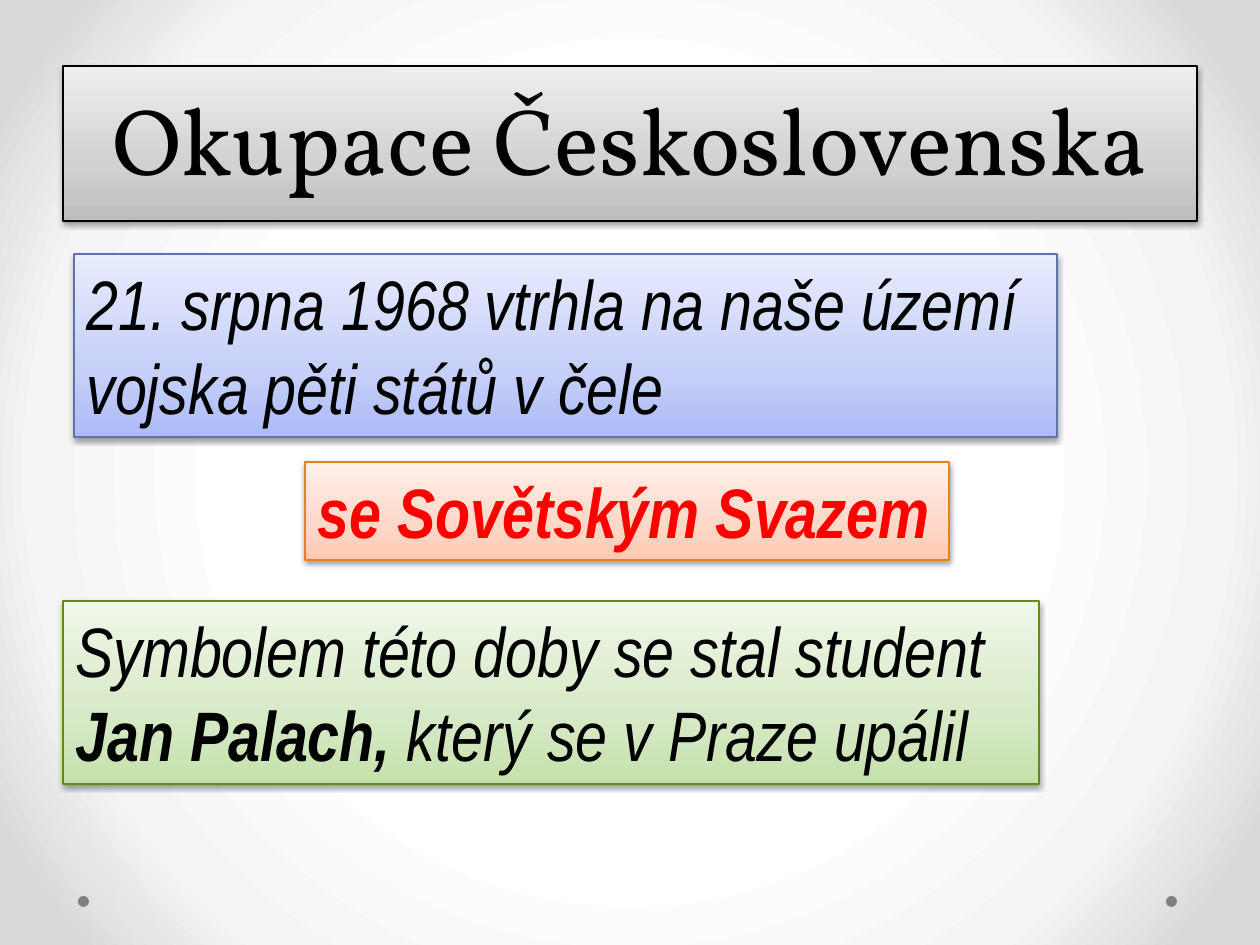
from lxml import etree
from pptx import Presentation
from pptx.dml.color import RGBColor
from pptx.enum.shapes import MSO_SHAPE
from pptx.enum.text import MSO_ANCHOR, MSO_AUTO_SIZE, PP_ALIGN
from pptx.oxml.ns import nsdecls, qn
from pptx.util import Emu, Pt

OVAL = MSO_SHAPE.OVAL
MIDDLE = MSO_ANCHOR.MIDDLE
GROW = MSO_AUTO_SIZE.SHAPE_TO_FIT_TEXT
CENTER = PP_ALIGN.CENTER

DPI = 126
COLORS = {"black": "000000", "red": "FF0000", "dot": "808080"}
EDGES = {"gray": "000000", "blue": "5C72B2", "orange": "E6811C", "green": "62891C"}
GRADIENTS = {
    "gray": ("BDBDBD", "D1D1D1", "EEEEEE"),
    "blue": ("ADBBF6", "C5CFF8", "E8ECFD"),
    "orange": ("FFC9B1", "FFD8C8", "FFF0EA"),
    "green": ("C5E1AB", "D6E9C5", "EFF7E9"),
    "page": ("FFFFFF", "F4F4F4", "DADADA"),
}
UPWARD = '<a:lin ang="16200000" scaled="0"/>'
RADIAL = ('<a:path path="circle"><a:fillToRect l="50000" t="50000" '
          'r="50000" b="50000"/></a:path>')


def px(n):
    return Emu(round(n * 914400 / DPI))


def rgb(name):
    return RGBColor.from_string(COLORS[name])


def set_gradient(fill, parent, name, stops, direction):
    fill.solid()
    gs = "".join(f'<a:gs pos="{pos * 1000}"><a:srgbClr val="{color}"/></a:gs>'
                 for pos, color in zip(stops, GRADIENTS[name]))
    grad = etree.fromstring(f'<a:gradFill {nsdecls("a")} rotWithShape="1">'
                            f'<a:gsLst>{gs}</a:gsLst>{direction}</a:gradFill>')
    parent.replace(parent.find(qn("a:solidFill")), grad)


def add_shadow(sp):
    sp._element.spPr.append(etree.fromstring(
        f'<a:effectLst {nsdecls("a")}><a:outerShdw blurRad="40000" dist="20000" '
        'dir="5400000" rotWithShape="0"><a:srgbClr val="000000">'
        '<a:alpha val="38000"/></a:srgbClr></a:outerShdw></a:effectLst>'))


def style_panel(sp, box, name):
    sp.left, sp.top, sp.width, sp.height = map(px, box)
    set_gradient(sp.fill, sp._element.spPr, name, (0, 35, 100), UPWARD)
    sp.line.color.rgb = RGBColor.from_string(EDGES[name])
    sp.line.width = Pt(0.75)
    add_shadow(sp)


def add_text(p, text, size=40, font="Arial Narrow", color="black", bold=False, italic=True):
    r = p.add_run()
    r.text = text
    r.font.size = Pt(size)
    r.font.name = font
    r.font.color.rgb = rgb(color)
    r.font.bold = bold
    r.font.italic = italic


def add_background(s):
    fill = s.background.fill
    fill.solid()
    set_gradient(fill, s._element.find(".//" + qn("p:bgPr")), "page", (50, 76, 92), RADIAL)


def add_dots(s, box):
    left, top, width, size = box
    for x in (left, left + width - size):
        sp = s.shapes.add_shape(OVAL, px(x), px(top), px(size), px(size))
        sp.shadow.inherit = False
        sp.fill.solid()
        sp.fill.fore_color.rgb = rgb("dot")
        sp.line.fill.background()


def add_title(s, box, text):
    sp = s.shapes.title
    style_panel(sp, box, "gray")
    tf = sp.text_frame
    tf.vertical_anchor = MIDDLE
    p = tf.paragraphs[0]
    p.alignment = CENTER
    p.line_spacing = Pt(58)
    add_text(p, text, size=54, font="Vollkorn", italic=False)


def add_panel(s, box, name, lines):
    sp = s.shapes.add_textbox(*map(px, box))
    style_panel(sp, box, name)
    tf = sp.text_frame
    tf.word_wrap = False
    tf.auto_size = GROW
    for i, line in enumerate(lines):
        p = tf.add_paragraph() if i else tf.paragraphs[0]
        for text, fmt in line:
            add_text(p, text, **fmt)


def main():
    prs = Presentation()
    prs.slide_width, prs.slide_height = px(1260), px(945)
    s = prs.slides.add_slide(prs.slide_layouts[5])
    add_background(s)
    add_dots(s, (78, 896, 1099, 11))
    add_title(s, (63, 66, 1134, 155), "Okupace Československa")
    add_panel(s, (74, 254, 983, 183), "blue", [
        [("21. srpna 1968 vtrhla na naše území", {})],
        [("vojska pěti států v čele", {})],
    ])
    add_panel(s, (305, 462, 644, 98), "orange", [
        [("se Sovětským Svazem", {"color": "red", "bold": True})],
    ])
    add_panel(s, (63, 601, 976, 183), "green", [
        [("Symbolem této doby se stal student", {})],
        [("Jan Palach, ", {"bold": True}), ("který se v Praze upálil", {})],
    ])
    prs.save("out.pptx")


if __name__ == "__main__":
    main()
